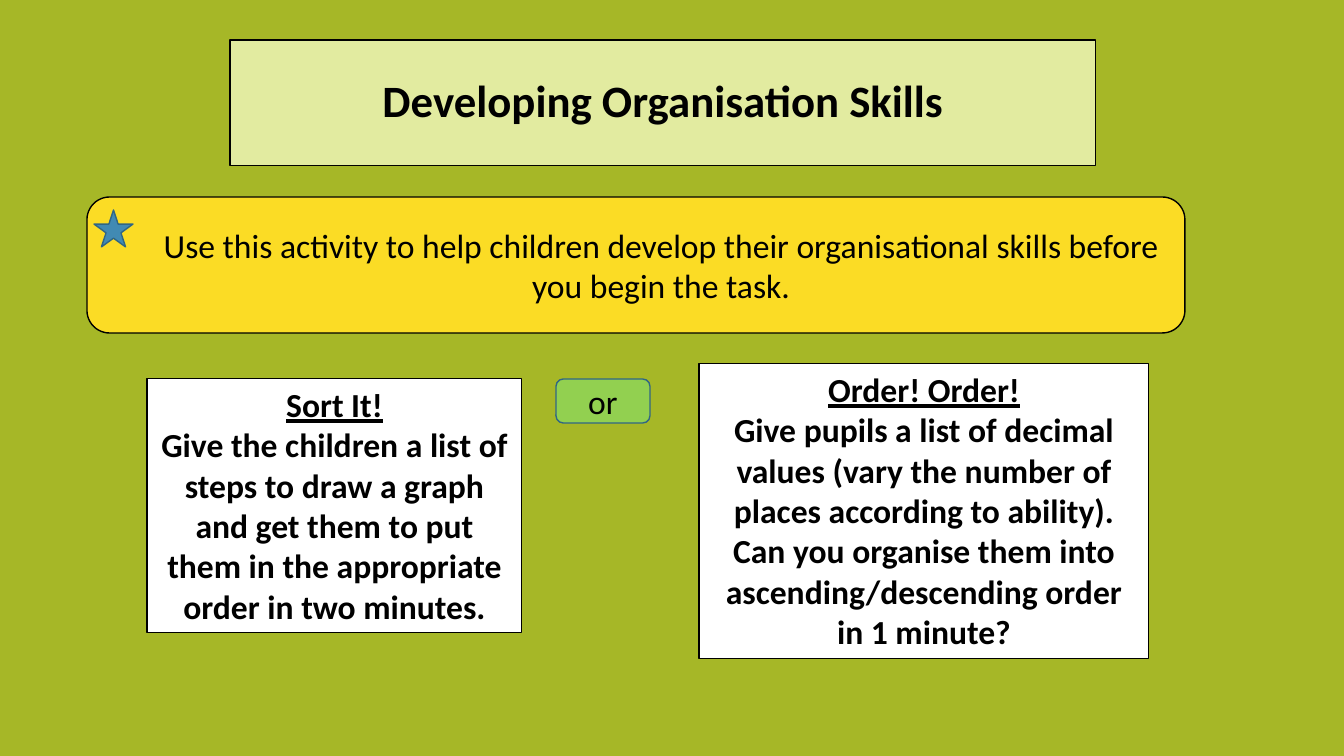
from dataclasses import dataclass

from pptx import Presentation
from pptx.dml.color import RGBColor
from pptx.enum.shapes import MSO_SHAPE
from pptx.enum.text import MSO_ANCHOR, MSO_AUTO_SIZE, PP_ALIGN
from pptx.util import Inches, Pt

HEADING = "Developing Organisation Skills"
INTRO = ("Use this activity to help children develop their organisational "
         "skills before you begin the task.")
CHOICE = "or"
ACTIVITIES = [
    ("Sort It!",
     "Give the children a list of steps to draw a graph and get them to put "
     "them in the appropriate order in two minutes.",
     (147, 379, 375, 254)),
    ("Order! Order!",
     "Give pupils a list of decimal values (vary the number of places according "
     "to ability). Can you organise them into ascending/descending order in 1 minute?",
     (699, 364, 450, 295)),
]
HEADING_BOX = (230, 40, 866, 126)
INTRO_BOX = (87, 197, 1098, 136)
STAR_BOX = (94, 210, 39, 37)
CHOICE_BOX = (556, 379, 94, 44)
PX_PER_INCH = 100.8


@dataclass(frozen=True)
class Theme:
    font: str = "Calibri"
    background: str = "A6B727"
    heading: str = "E2EBA0"
    intro: str = "FBDC25"
    star: str = "418AB3"
    star_edge: str = "306684"
    card: str = "FFFFFF"
    choice: str = "92D050"
    ink: str = "000000"
    heading_size: int = 32
    body_size: int = 24
    thin: float = 0.75
    line: float = 1


THEME = Theme()


def emu(box):
    return [Inches(px / PX_PER_INCH) for px in box]


def paint(shape, fill, edge, width):
    shape.fill.solid()
    shape.fill.fore_color.rgb = RGBColor.from_string(fill)
    shape.line.color.rgb = RGBColor.from_string(edge)
    shape.line.width = Pt(width)


def write(paragraph, words, size, bold=False, underline=False):
    paragraph.alignment = PP_ALIGN.CENTER
    run = paragraph.add_run()
    run.text = words
    font = run.font
    font.name, font.size = THEME.font, Pt(size)
    font.bold, font.underline = bold, underline
    font.color.rgb = RGBColor.from_string(THEME.ink)


def add_panel(slide, preset, box, fill, edge):
    panel = slide.shapes.add_shape(preset, *emu(box))
    panel.shadow.inherit = False
    paint(panel, fill, edge, THEME.line)
    return panel


def add_heading(slide):
    heading = slide.shapes.title
    heading.left, heading.top, heading.width, heading.height = emu(HEADING_BOX)
    paint(heading, THEME.heading, THEME.ink, THEME.thin)
    heading.text_frame.vertical_anchor = MSO_ANCHOR.MIDDLE
    line = heading.text_frame.paragraphs[0]
    line.line_spacing = 0.9
    write(line, HEADING, THEME.heading_size, bold=True)


def add_intro(slide):
    intro = add_panel(slide, MSO_SHAPE.ROUNDED_RECTANGLE, INTRO_BOX, THEME.intro, THEME.ink)
    line = intro.text_frame.paragraphs[0]
    line.level = 1
    indent = line._p.get_or_add_pPr()
    indent.set("marL", str(Inches(0.5)))
    indent.set("indent", "0")
    write(line, INTRO, THEME.body_size)


def add_activity(slide, name, task, box):
    card = slide.shapes.add_textbox(*emu(box))
    paint(card, THEME.card, THEME.ink, THEME.thin)
    frame = card.text_frame
    frame.word_wrap = True
    frame.auto_size = MSO_AUTO_SIZE.SHAPE_TO_FIT_TEXT
    write(frame.paragraphs[0], name, THEME.body_size, bold=True, underline=True)
    write(frame.add_paragraph(), task, THEME.body_size, bold=True)


def main():
    deck = Presentation()
    deck.slide_width, deck.slide_height = emu((1344, 756))
    slide = deck.slides.add_slide(deck.slide_layouts.get_by_name("Title Only"))
    slide.background.fill.solid()
    slide.background.fill.fore_color.rgb = RGBColor.from_string(THEME.background)

    add_heading(slide)
    add_intro(slide)
    add_panel(slide, MSO_SHAPE.STAR_5_POINT, STAR_BOX, THEME.star, THEME.star_edge)
    for name, task, box in ACTIVITIES:
        add_activity(slide, name, task, box)
    choice = add_panel(slide, MSO_SHAPE.ROUNDED_RECTANGLE, CHOICE_BOX,
                       THEME.choice, THEME.star_edge)
    write(choice.text_frame.paragraphs[0], CHOICE, THEME.body_size)
    deck.save("out.pptx")


if __name__ == "__main__":
    main()
